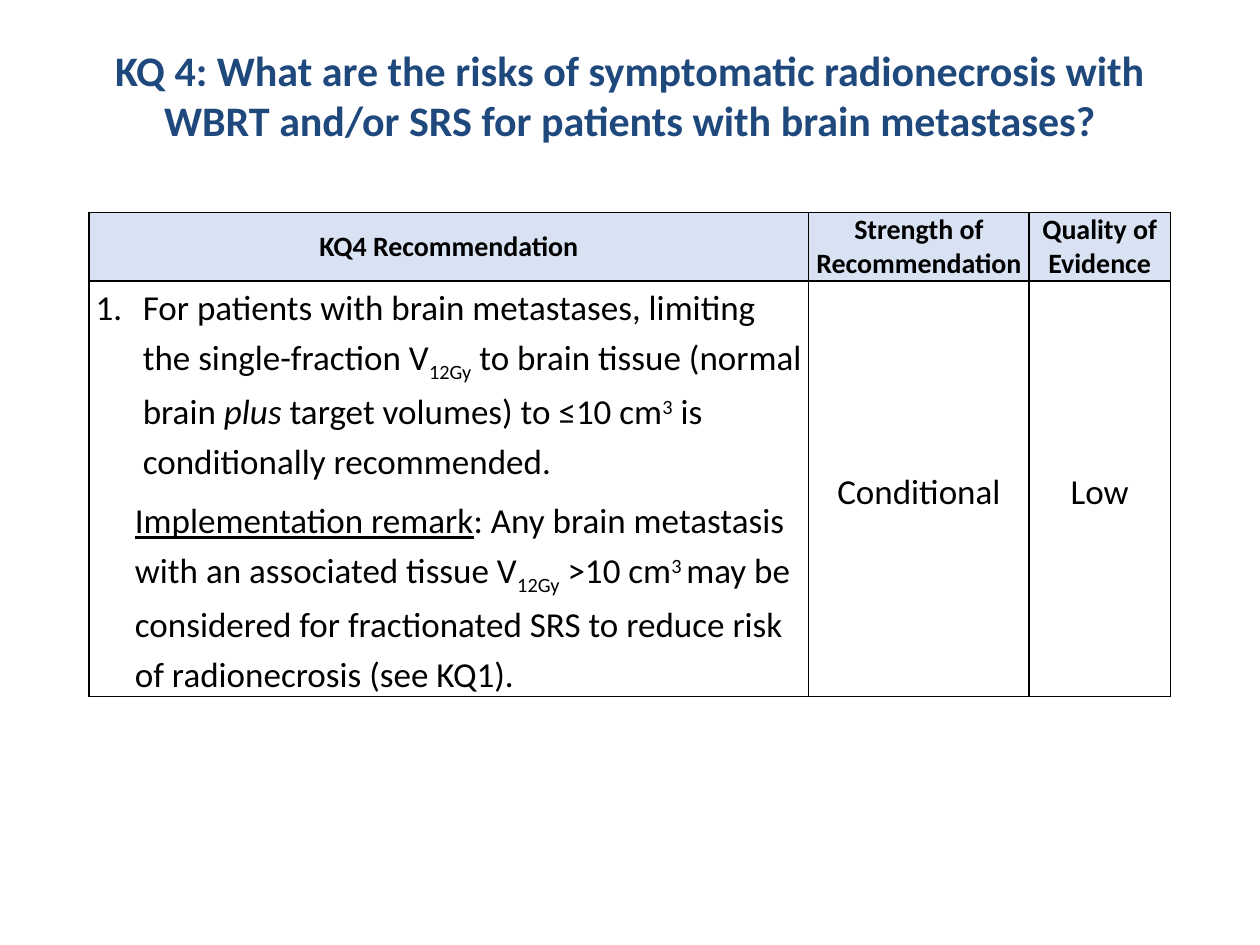
from lxml.etree import SubElement
from pptx import Presentation
from pptx.dml.color import RGBColor
from pptx.enum.text import MSO_ANCHOR, PP_ALIGN
from pptx.oxml.ns import qn
from pptx.util import Pt

NAVY = RGBColor(0x1F, 0x49, 0x7D)
BLACK = RGBColor(0, 0, 0)
PALE_BLUE = RGBColor(0xD9, 0xE2, 0xF3)

HEADERS = ["KQ4 Recommendation", "Strength of Recommendation", "Quality of Evidence"]
RATINGS = ["Conditional", "Low"]
COLUMN_WIDTHS = [411.12, 126, 80.64]
ROW_HEIGHTS = [39, 237]
SUBSCRIPT = {"baseline": "-25000"}
SUPERSCRIPT = {"baseline": "30000"}
RECOMMENDATION = [
    ("For patients with brain metastases, limiting the single-fraction V", {}),
    ("12Gy", SUBSCRIPT),
    (" to brain tissue (normal brain ", {}),
    ("plus", {"i": "1"}),
    (" target volumes) to ≤10 cm", {}),
    ("3", SUPERSCRIPT),
    (" is conditionally recommended.", {}),
]
REMARK = [
    ("Implementation remark", {"u": "sng"}),
    (": Any brain metastasis with an associated tissue V", {}),
    ("12Gy", SUBSCRIPT),
    (" >10 cm", {}),
    ("3 ", SUPERSCRIPT),
    ("may be considered for fractionated SRS to reduce risk of radionecrosis (see KQ1).", {}),
]


class SlideBuilder:
    """Hold the text style and the current slide, and add its elements."""

    font_name = "Calibri"
    line_spacing = 1.15

    def __init__(self, presentation):
        self.slide = presentation.slides.add_slide(presentation.slide_layouts[5])

    def format_run(self, run, size, color=BLACK, bold=False):
        run.font.name = self.font_name
        run.font.size = Pt(size)
        run.font.bold = bold
        run.font.color.rgb = color

    def add_title(self, text, left, top, width, height):
        title = self.slide.shapes.title
        title.left, title.top, title.width, title.height = map(Pt, (left, top, width, height))
        title.text_frame.text = text
        title.text_frame.word_wrap = True
        title.text_frame.vertical_anchor = MSO_ANCHOR.TOP
        paragraph = title.text_frame.paragraphs[0]
        paragraph.alignment = PP_ALIGN.CENTER
        self.format_run(paragraph.runs[0], 24, NAVY, True)

    def add_table(self, left, top, column_widths, row_heights):
        frame = self.slide.shapes.add_table(
            len(row_heights), len(column_widths), Pt(left), Pt(top),
            Pt(sum(column_widths)), Pt(sum(row_heights)))
        table = frame.table
        table.first_row = table.horz_banding = False
        for column, width in zip(table.columns, column_widths):
            column.width = Pt(width)
        for row, height in zip(table.rows, row_heights):
            row.height = Pt(height)
        for cell in table.iter_cells():
            self.format_cell(cell)
        return table

    def format_cell(self, cell):
        cell.margin_left = cell.margin_right = Pt(3.6)
        cell.margin_top = cell.margin_bottom = Pt(0)
        properties = cell._tc.get_or_add_tcPr()
        for side in ("a:lnL", "a:lnR", "a:lnT", "a:lnB"):
            line = SubElement(properties, qn(side), w=str(Pt(1)))
            SubElement(SubElement(line, qn("a:solidFill")), qn("a:srgbClr"), val=str(BLACK))
        cell.fill.background()

    def add_centered_text(self, cell, text, size, bold=False):
        cell.text_frame.text = text
        cell.vertical_anchor = MSO_ANCHOR.MIDDLE
        paragraph = cell.text_frame.paragraphs[0]
        paragraph.alignment = PP_ALIGN.CENTER
        self.format_run(paragraph.runs[0], size, bold=bold)
        return paragraph

    def add_header(self, cell, text):
        cell.fill.solid()
        cell.fill.fore_color.rgb = PALE_BLUE
        self.add_centered_text(cell, text, 16, True)

    def add_rating(self, cell, text):
        self.add_centered_text(cell, text, 20).line_spacing = self.line_spacing

    def add_rich_text(self, paragraph, parts, margin, numbered=False):
        properties = paragraph._p.get_or_add_pPr()
        properties.set("marL", str(Pt(margin)))
        properties.set("indent", str(Pt(-margin if numbered else 0)))
        if numbered:
            SubElement(properties, qn("a:buFont"), typeface="+mj-lt")
            SubElement(properties, qn("a:buAutoNum"), type="arabicPeriod")
        paragraph.line_spacing = self.line_spacing
        for text, attributes in parts:
            run = paragraph.add_run()
            run.text = text
            self.format_run(run, 20)
            for name, value in attributes.items():
                run._r.get_or_add_rPr().set(name, value)


def main():
    presentation = Presentation()
    presentation.slide_width, presentation.slide_height = Pt(720), Pt(540)
    builder = SlideBuilder(presentation)
    builder.add_title(
        "KQ 4: What are the risks of symptomatic radionecrosis with "
        "WBRT and/or SRS for patients with brain metastases?", 36, 21.6, 648, 90)
    table = builder.add_table(51, 121.5, COLUMN_WIDTHS, ROW_HEIGHTS)
    for column, header in enumerate(HEADERS):
        builder.add_header(table.cell(0, column), header)
    text_frame = table.cell(1, 0).text_frame
    recommendation = text_frame.paragraphs[0]
    builder.add_rich_text(recommendation, RECOMMENDATION, 27, numbered=True)
    recommendation.space_after = Pt(6)
    builder.add_rich_text(text_frame.add_paragraph(), REMARK, 22.5)
    for column, rating in enumerate(RATINGS, start=1):
        builder.add_rating(table.cell(1, column), rating)
    presentation.save("out.pptx")


if __name__ == "__main__":
    main()
